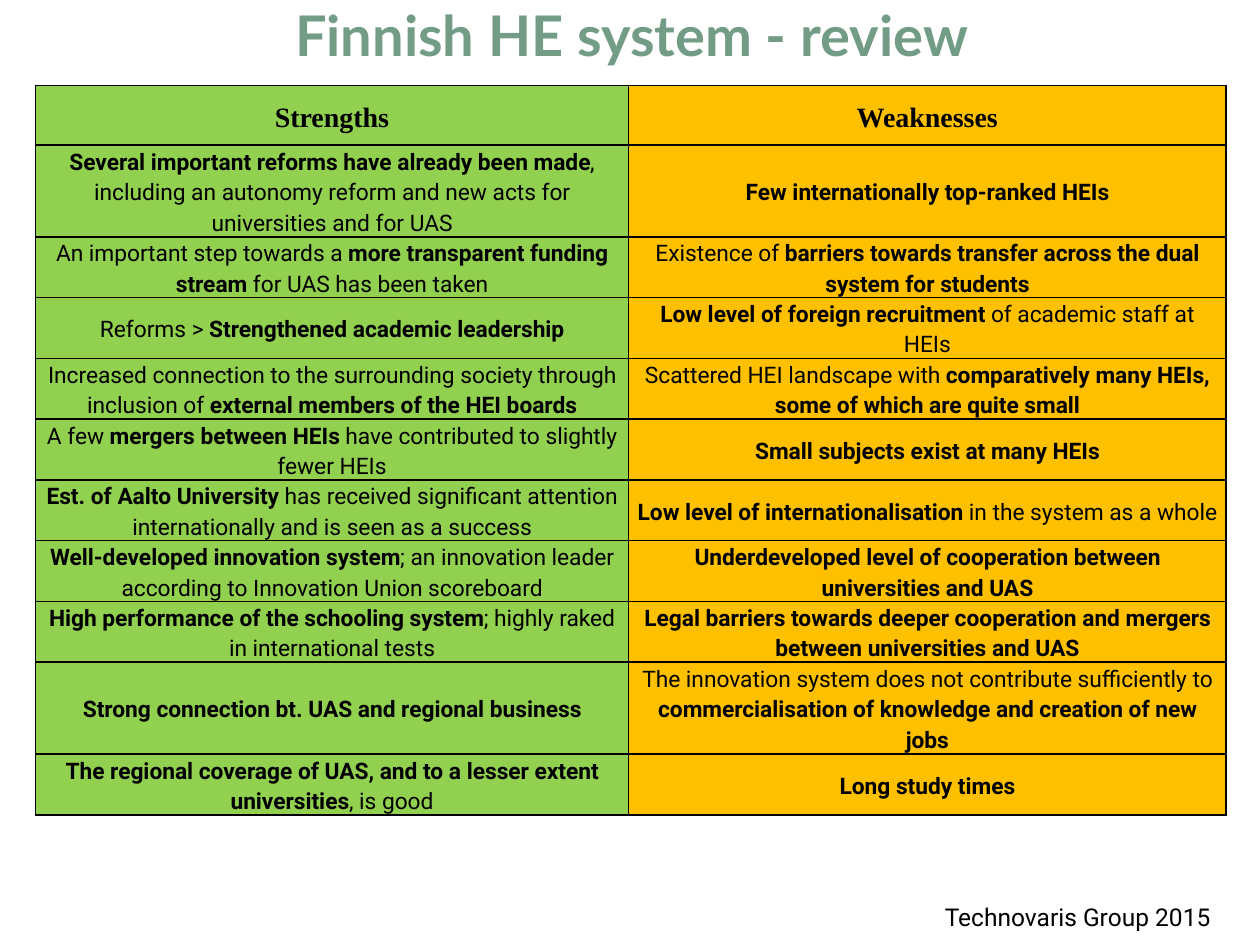
import dataclasses

import pptx
import pptx.dml.color
import pptx.enum.text
import pptx.oxml.ns
import pptx.util
from lxml import etree

BLACK = pptx.dml.color.RGBColor(0x00, 0x00, 0x00)
SAGE = pptx.dml.color.RGBColor(0x72, 0x9C, 0x86)
GREEN = pptx.dml.color.RGBColor(0x92, 0xD0, 0x50)
AMBER = pptx.dml.color.RGBColor(0xFF, 0xC0, 0x00)

CENTER = pptx.enum.text.PP_ALIGN.CENTER
MIDDLE = pptx.enum.text.MSO_ANCHOR.MIDDLE

WIDTH = pptx.util.Inches(10)
HEIGHT = pptx.util.Inches(7.5)

# Shares of the slide, in percent
COLUMN_SHARES = (47.1, 47.4)
HEADER_SHARE = 6.27
LINE_SHARE = 3.33
LINE_TRIM = 0.26


@dataclasses.dataclass(frozen=True)
class Area:
    """Left, top, width and height in percent of the slide."""
    left: float
    top: float
    width: float
    height: float


@dataclasses.dataclass(frozen=True)
class Finding:
    """One pair of review points; double asterisks enclose bold words."""
    strength: str
    weakness: str
    lines: int = 2


TITLE_AREA = Area(3.3, 2.8, 93.7, 8.4)
TABLE_AREA = Area(2.8, 9.07, 94.5, 77)
SOURCE_AREA = Area(74, 94.8, 23.3, 4.53)

FINDINGS = (
    Finding("**Several important reforms have already been made**, including an "
            "autonomy reform and new acts for universities and for UAS",
            "**Few internationally top-ranked HEIs**", lines=3),
    Finding("An important step towards a **more transparent funding stream **"
            "for UAS has been taken",
            "Existence of **barriers towards transfer across the dual system "
            "for students**"),
    Finding("Reforms > **Strengthened academic leadership**",
            "**Low level of foreign recruitment **of academic staff at HEIs"),
    Finding("Increased connection to the surrounding society through inclusion "
            "of **external members of the HEI boards**",
            "Scattered HEI landscape with **comparatively many HEIs, some of "
            "which are quite small**"),
    Finding("A few **mergers between HEIs **have contributed to slightly fewer HEIs",
            "**Small subjects exist at many HEIs**"),
    Finding("**Est. of Aalto University **has received significant attention "
            "internationally and is seen as a success",
            "**Low level of internationalisation **in the system as a whole"),
    Finding("**Well-developed innovation system**; an innovation leader "
            "according to Innovation Union scoreboard",
            "**Underdeveloped level of cooperation between universities and UAS**"),
    Finding("**High performance of the schooling system**; highly raked in "
            "international tests",
            "**Legal barriers towards deeper cooperation and mergers between "
            "universities and UAS**"),
    Finding("**Strong connection bt. UAS and regional business**",
            "The innovation system does not contribute sufficiently to "
            "**commercialisation of knowledge and creation of new jobs**", lines=3),
    Finding("**The regional coverage of UAS, and to a lesser extent "
            "universities**, is good",
            "**Long study times**"),
)


def across(share: float) -> int:
    return round(WIDTH * share / 100)


def down(share: float) -> int:
    return round(HEIGHT * share / 100)


def bounds(area: Area) -> tuple[int, int, int, int]:
    return across(area.left), down(area.top), across(area.width), down(area.height)


def format_span(span, name: str, size: float, color, bold: bool) -> None:
    span.font.name = name
    span.font.size = pptx.util.Pt(size)
    span.font.color.rgb = color
    span.font.bold = bold


def add_borders(cell) -> None:
    properties = cell._tc.get_or_add_tcPr()
    for position, side in enumerate(("lnL", "lnR", "lnT", "lnB")):
        line = etree.Element(pptx.oxml.ns.qn(f"a:{side}"), w=str(pptx.util.Pt(1)))
        fill = etree.SubElement(line, pptx.oxml.ns.qn("a:solidFill"))
        etree.SubElement(fill, pptx.oxml.ns.qn("a:srgbClr"), val=str(BLACK))
        properties.insert(position, line)


def fill_cell(cell, marked_text: str, color, name: str, size: float) -> None:
    cell.fill.solid()
    cell.fill.fore_color.rgb = color
    add_borders(cell)
    cell.vertical_anchor = MIDDLE
    cell.margin_left = cell.margin_right = pptx.util.Inches(0.05)
    cell.margin_top = cell.margin_bottom = 0
    para = cell.text_frame.paragraphs[0]
    para.alignment = CENTER
    para.line_spacing = 1.15
    for index, words in enumerate(marked_text.split("**")):
        if words:
            span = para.add_run()
            span.text = words
            format_span(span, name, size, BLACK, bold=index % 2 == 1)


def add_title(page) -> None:
    title = page.shapes.title
    title.left, title.top, title.width, title.height = bounds(TITLE_AREA)
    frame = title.text_frame
    frame.text = "Finnish HE system - review"
    frame.vertical_anchor = MIDDLE
    # The deep bottom margin lifts the heading clear of the table
    frame.margin_top = 0
    frame.margin_bottom = pptx.util.Inches(0.51)
    para = frame.paragraphs[0]
    para.alignment = CENTER
    format_span(para.runs[0], "Lato", 32, SAGE, bold=True)


def add_review_table(page) -> None:
    table = page.shapes.add_table(
        len(FINDINGS) + 1, len(COLUMN_SHARES), *bounds(TABLE_AREA)).table
    for column, share in zip(table.columns, COLUMN_SHARES):
        column.width = across(share)
    table.rows[0].height = down(HEADER_SHARE)
    for column, (heading, color) in enumerate(
            (("Strengths", GREEN), ("Weaknesses", AMBER))):
        fill_cell(table.cell(0, column), f"**{heading}**", color,
                  "Times New Roman", 16)
    for row, finding in enumerate(FINDINGS, start=1):
        table.rows[row].height = down(LINE_SHARE * finding.lines - LINE_TRIM)
        fill_cell(table.cell(row, 0), finding.strength, GREEN, "Roboto", 13)
        fill_cell(table.cell(row, 1), finding.weakness, AMBER, "Roboto", 13)


def add_source(page) -> None:
    box = page.shapes.add_textbox(*bounds(SOURCE_AREA))
    frame = box.text_frame
    frame.word_wrap = True
    frame.auto_size = pptx.enum.text.MSO_AUTO_SIZE.SHAPE_TO_FIT_TEXT
    frame.text = "Technovaris Group 2015"
    format_span(frame.paragraphs[0].runs[0], "Roboto", 14, BLACK, bold=False)


def main() -> None:
    deck = pptx.Presentation()
    deck.slide_width = WIDTH
    deck.slide_height = HEIGHT
    page = deck.slides.add_slide(deck.slide_layouts.get_by_name("Title Only"))
    add_title(page)
    add_review_table(page)
    add_source(page)
    deck.save("out.pptx")


if __name__ == "__main__":
    main()
